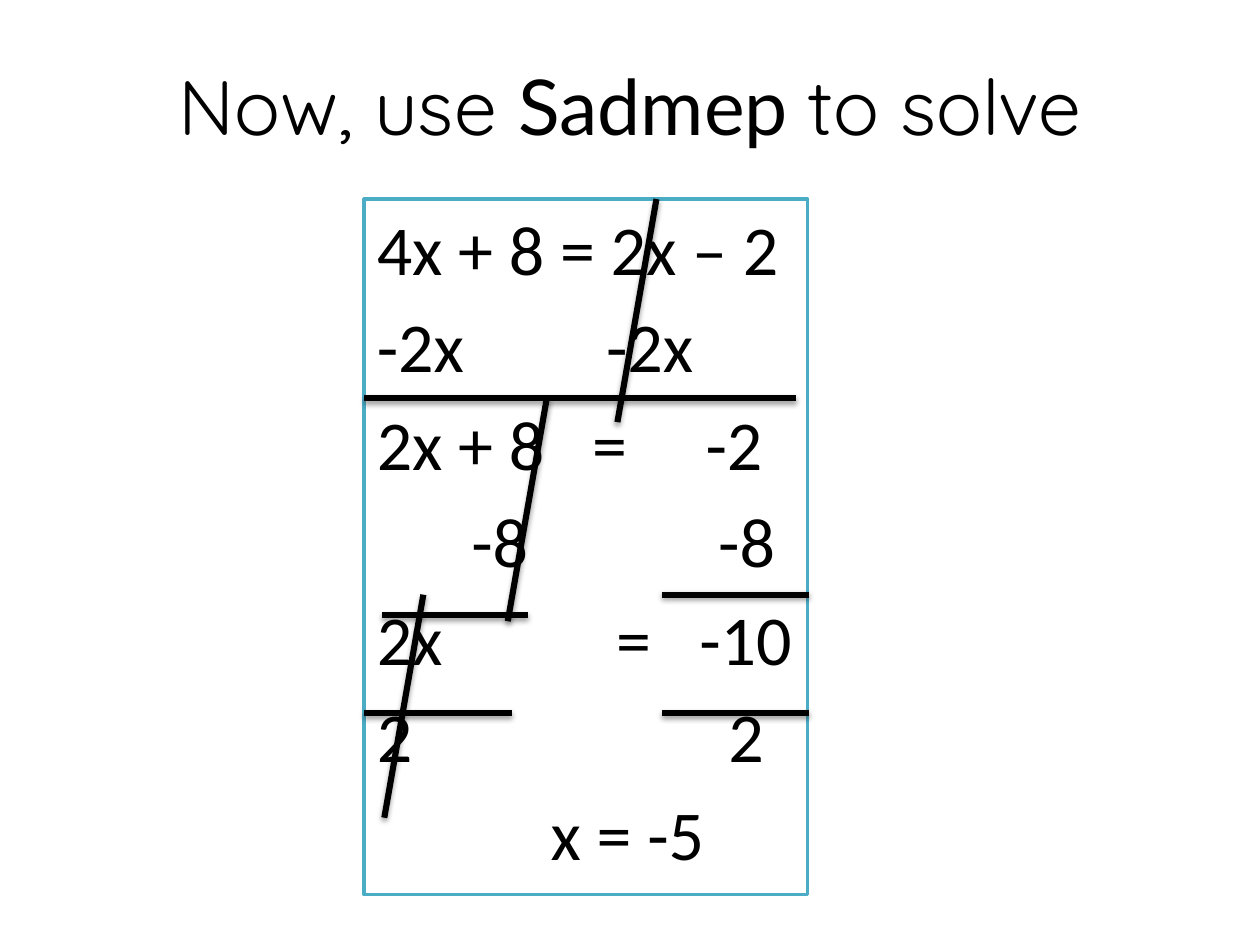
from lxml import etree
from pptx import Presentation
from pptx.dml.color import RGBColor
from pptx.enum.shapes import MSO_CONNECTOR
from pptx.enum.text import MSO_ANCHOR, MSO_AUTO_SIZE, PP_ALIGN
from pptx.oxml.ns import qn
from pptx.util import Inches, Pt

TITLE_RUNS = [("Now, use ", "Quicksand"), ("Sadmep ", "Lato"), ("to solve", "Quicksand")]

STEPS = [
    ("4x + 8 = 2x – 2", []),
    ("-2x\t-2x", [1.82]),
    ("2x + 8\t=\t-2", [1.71, 2.61]),
    ("\t-8\t-8", [0.75, 2.71]),
    ("2x\t=\t-10", [1.9, 2.56]),
    ("2\t2", [2.79]),
    ("\tx = -5", [1.38]),
]

RULES = [(0.14, 3.3, 1.16), (0, 1.58, 3.43), (2.36, 3.14, 1.17), (0, 4.08, 1.17), (2.36, 4.08, 1.17)]
STRIKES = [(2.01, 1.77), (1.14, 3.35), (0.16, 4.91)]
STRIKE_RUN, STRIKE_RISE = 0.31, 1.77


def rgb(hex_color):
    """Return the colour for a hex string."""
    return RGBColor.from_string(hex_color)


def place(shape, box):
    """Move a shape to a box given in inches and fill it white."""
    shape.left, shape.top, shape.width, shape.height = map(Inches, box)
    shape.fill.solid()
    shape.fill.fore_color.rgb = rgb("FFFFFF")


def format_run(run, font_name, size):
    """Give a run its font, size and black colour."""
    run.font.name = font_name
    run.font.size = Pt(size)
    run.font.color.rgb = rgb("000000")


def clear_body_indent(deck):
    """Remove the hanging indent from the first level of the template's body style."""
    body_style = next(deck.slide_master._element.iter(qn("p:bodyStyle")))
    first_level = body_style.find(qn("a:lvl1pPr"))
    first_level.set("marL", "0")
    first_level.attrib.pop("indent", None)


def set_tabs(paragraph, stops):
    """Remove the bullet and add left tab stops in inches."""
    properties = paragraph._p.get_or_add_pPr()
    etree.SubElement(properties, qn("a:buNone"))
    if stops:
        tab_list = etree.SubElement(properties, qn("a:tabLst"))
        for stop in stops:
            etree.SubElement(tab_list, qn("a:tab"), pos=str(Inches(stop)), algn="l")


def add_shadow(connector):
    """Put a soft shadow below a connector."""
    effects = etree.SubElement(connector._element.spPr, qn("a:effectLst"))
    shadow = etree.SubElement(effects, qn("a:outerShdw"), blurRad=str(Pt(3.1)),
                              dist=str(Pt(1.6)), dir="5400000", rotWithShape="0")
    black = etree.SubElement(shadow, qn("a:srgbClr"), val="000000")
    etree.SubElement(black, qn("a:alpha"), val="38000")


def add_stroke(slide, start, end):
    """Draw a thick black line between two points in inches."""
    stroke = slide.shapes.add_connector(MSO_CONNECTOR.STRAIGHT, *map(Inches, start + end))
    stroke.line.color.rgb = rgb("000000")
    stroke.line.width = Pt(3.5)
    add_shadow(stroke)


def fill_title(slide, box):
    """Place the heading with its mixed fonts."""
    title = slide.shapes.title
    place(title, box)
    title.text_frame.vertical_anchor = MSO_ANCHOR.MIDDLE
    heading = title.text_frame.paragraphs[0]
    heading.alignment = PP_ALIGN.CENTER
    for words, font_name in TITLE_RUNS:
        run = heading.add_run()
        run.text = words
        format_run(run, font_name, 44)


def fill_solution(slide, box):
    """Place the worked equation in its outlined box."""
    solution = slide.placeholders[1]
    place(solution, box)
    solution.line.color.rgb = rgb("4BACC6")
    solution.line.width = Pt(2)
    frame = solution.text_frame
    frame.word_wrap = True
    frame.auto_size = MSO_AUTO_SIZE.NONE
    frame.margin_right = 0
    frame.text = "\n".join(step for step, _ in STEPS)
    for index, (paragraph, (_, stops)) in enumerate(zip(frame.paragraphs, STEPS)):
        set_tabs(paragraph, stops)
        paragraph.space_before = Pt(7.7 if index else 0)
        for run in paragraph.runs:
            format_run(run, "Calibri", 40)


def add_working_lines(slide, box):
    """Draw the rules under the steps and the strikes through cancelled terms."""
    left, top = box[:2]
    for x, y, length in RULES:
        add_stroke(slide, (left + x, top + y), (left + x + length, top + y))
    for x, y in STRIKES:
        add_stroke(slide, (left + x, top + y),
                   (left + x + STRIKE_RUN, top + y - STRIKE_RISE))


def main():
    """Build and save the slide."""
    deck = Presentation()
    deck.slide_width, deck.slide_height = Inches(10), Inches(7.5)
    clear_body_indent(deck)
    slide = deck.slides.add_slide(deck.slide_layouts[1])
    solution_box = (2.89, 1.58, 3.52, 5.52)
    fill_title(slide, (0.5, 0.08, 9, 1.5))
    fill_solution(slide, solution_box)
    add_working_lines(slide, solution_box)
    deck.save("out.pptx")


if __name__ == "__main__":
    main()
